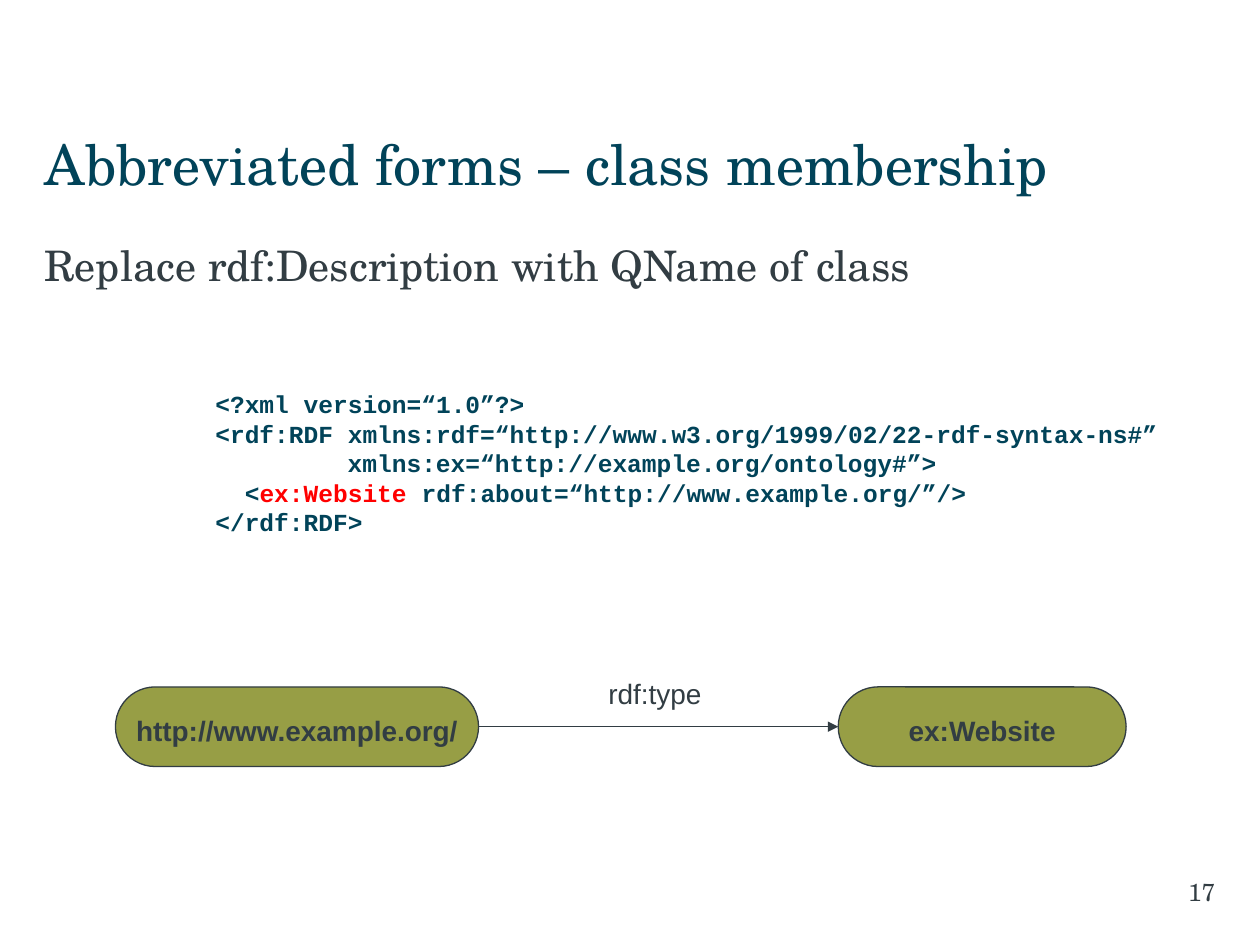
from pptx import Presentation
from pptx.util import Pt
from pptx.dml.color import RGBColor
from pptx.enum.dml import MSO_LINE
from pptx.enum.shapes import MSO_CONNECTOR, MSO_SHAPE
from pptx.enum.text import MSO_ANCHOR, PP_ALIGN
from pptx.oxml.ns import qn
from lxml.etree import SubElement

SERIF, SANS, MONO = "TeX Gyre Schola", "Arial", "Courier New"
TEAL, GREY, OLIVE, RED = "014359", "323D43", "979E45", "FF0000"


def tint(code):
    return RGBColor.from_string(code)


def write(shape, lines, font=SERIF, size=16, color=GREY, bold=False,
          align=PP_ALIGN.LEFT, anchor=MSO_ANCHOR.TOP, wrap=True,
          inset=(7.2, 3.6, 7.2, 3.6), after=0):
    frame = shape.text_frame
    frame.word_wrap = wrap
    frame.vertical_anchor = anchor
    (frame.margin_left, frame.margin_top,
     frame.margin_right, frame.margin_bottom) = map(Pt, inset)
    for i, (indent, parts) in enumerate(lines):
        para = frame.add_paragraph() if i else frame.paragraphs[0]
        para.alignment = align
        para.space_before, para.space_after = Pt(0), Pt(after)
        if indent:
            para._p.get_or_add_pPr().set("marL", str(Pt(indent)))
        for text, shade in parts:
            run = para.add_run()
            run.text = text
            run.font.name, run.font.size = font, Pt(size)
            run.font.bold = bold
            run.font.color.rgb = tint(shade or color)


deck = Presentation()
deck.slide_width, deck.slide_height = Pt(720), Pt(540)
slide = deck.slides.add_slide(deck.slide_layouts[5])
shapes = slide.shapes

title = shapes.title
title.left, title.top, title.width, title.height = map(Pt, (25.2, 70.6, 669, 51))
write(title, [(0, [("Abbreviated forms – class membership", None)])],
      size=32, color=TEAL, inset=(0, 3.6, 7.2, 3.6))

body = shapes.add_textbox(Pt(25.2), Pt(133.2), Pt(669), Pt(352))
write(body, [(0, [("Replace rdf:Description with QName of class", None)])],
      size=24, inset=(0, 3.6, 7.2, 3.6), after=18)

char = 8.4
code = shapes.add_textbox(Pt(116), Pt(219), Pt(578), Pt(91))
write(code, [
    (0, [("<?xml version=“1.0”?>", None)]),
    (0, [("<rdf:RDF xmlns:rdf=“http://www.w3.org/1999/02/22-rdf-syntax-ns#”", None)]),
    (9 * char, [("xmlns:ex=“http://example.org/ontology#”>", None)]),
    (2 * char, [("<", None), ("ex:Website", RED),
                (" rdf:about=“http://www.example.org/”/>", None)]),
    (0, [("</rdf:RDF>", None)]),
], font=MONO, size=14, color=TEAL, bold=True)

nodes = []
for text, left, width in (("http://www.example.org/", 66, 207.5),
                          ("ex:Website", 479, 164.5)):
    node = shapes.add_shape(MSO_SHAPE.ROUNDED_RECTANGLE,
                            Pt(left), Pt(392.5), Pt(width), Pt(45.5))
    node.adjustments[0] = 0.5
    node.shadow.inherit = False
    node.fill.solid()
    node.fill.fore_color.rgb = tint(OLIVE)
    node.line.color.rgb = tint(GREY)
    node.line.width = Pt(0.75)
    write(node, [(0, [(text, None)])], font=SANS, bold=True, wrap=False,
          align=PP_ALIGN.CENTER, anchor=MSO_ANCHOR.MIDDLE, inset=(0, 8, 0, 3.6))
    nodes.append(node)

link = shapes.add_connector(MSO_CONNECTOR.STRAIGHT, 0, 0, 0, 0)
link.begin_connect(nodes[0], 3)
link.end_connect(nodes[1], 1)
link.line.color.rgb = tint(GREY)
link.line.width = Pt(0.75)
link.line.dash_style = MSO_LINE.SOLID
SubElement(link.line._get_or_add_ln(), qn("a:tailEnd"), type="triangle")
SubElement(link._element.spPr, qn("a:effectLst"))

label = shapes.add_textbox(Pt(340.5), Pt(383), Pt(67.5), Pt(26.5))
write(label, [(0, [("rdf:type", None)])], font=SANS, wrap=False,
      align=PP_ALIGN.CENTER, anchor=MSO_ANCHOR.MIDDLE)

number = shapes.add_textbox(Pt(556.5), Pt(497.5), Pt(138), Pt(24.5))
write(number, [(0, [("17", None)])], size=14, align=PP_ALIGN.RIGHT,
      inset=(7.2, 3.6, 0, 3.6))

deck.save("out.pptx")
